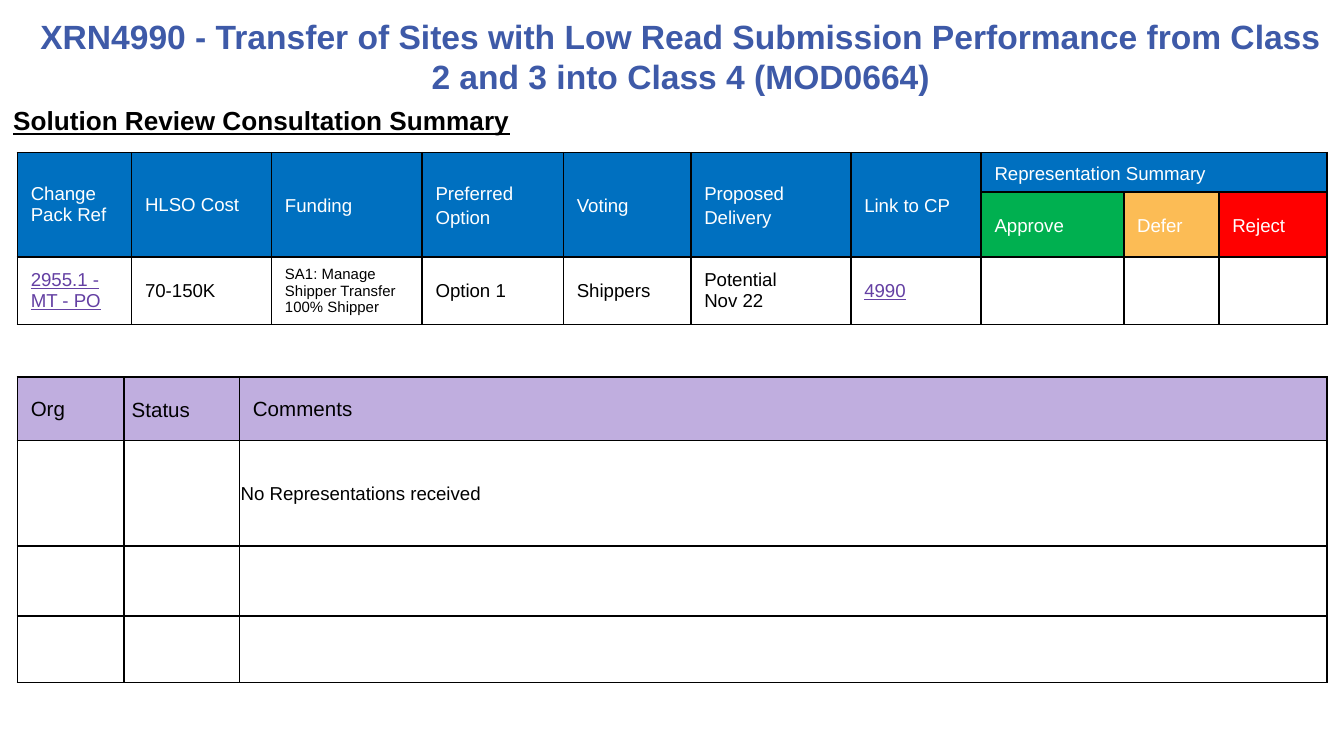
from dataclasses import dataclass

from lxml import etree
from pptx import Presentation
from pptx.dml.color import RGBColor
from pptx.enum.text import MSO_ANCHOR, PP_ALIGN
from pptx.oxml.ns import qn
from pptx.util import Pt

MIDDLE = MSO_ANCHOR.MIDDLE
CENTER = PP_ALIGN.CENTER
TITLE_ONLY = 5

FONT = "Arial"
BLACK, WHITE = "000000", "FFFFFF"
TITLE_BLUE, LINK_PURPLE = "3E5AA8", "6440A3"
HEADER_BLUE, HEADER_LILAC = "0070C0", "C0AEDF"
APPROVE_GREEN, DEFER_AMBER, REJECT_RED = "00B050", "FCBC55", "FF0000"
BORDER_WIDTH = Pt(1)
TABLE_LEFT = 9.3


@dataclass(frozen=True)
class Entry:
    """One filled-in table cell; margins are left, top, right, bottom in points."""
    row: int
    column: int
    text: str
    size: float = 10
    color: str = BLACK
    fill: str = WHITE
    underline: bool = False
    line_spacing: float = 1.0
    row_span: int = 1
    column_span: int = 1
    margins: tuple = (7.2, 3.6, 7.2, 3.6)


def rgb(color: str) -> RGBColor:
    return RGBColor.from_string(color)


def write_text(frame, text: str, *, size: float, color: str = BLACK, bold: bool = False,
               underline: bool = False, line_spacing: float = 1.0, align=None) -> None:
    """Write each line of text as its own paragraph."""
    for index, line in enumerate(text.split("\n")):
        paragraph = frame.add_paragraph() if index else frame.paragraphs[0]
        paragraph.line_spacing = line_spacing
        paragraph.alignment = align
        run = paragraph.add_run()
        run.text = line
        run.font.name = FONT
        run.font.size = Pt(size)
        run.font.bold = bold
        run.font.underline = underline
        run.font.color.rgb = rgb(color)


def add_borders(cell) -> None:
    properties = cell._tc.get_or_add_tcPr()
    for side in ("a:lnL", "a:lnR", "a:lnT", "a:lnB"):
        line = etree.SubElement(properties, qn(side), w=str(BORDER_WIDTH))
        fill = etree.SubElement(line, qn("a:solidFill"))
        etree.SubElement(fill, qn("a:srgbClr"), val=BLACK)


def set_fill(cell, color: str) -> None:
    cell.fill.solid()
    cell.fill.fore_color.rgb = rgb(color)


def add_grid(slide, top: float, widths: list[float], heights: list[float],
             entries: list[Entry]) -> None:
    """Add a bordered table and fill in its entries."""
    table = slide.shapes.add_table(
        len(heights), len(widths), Pt(TABLE_LEFT), Pt(top),
        Pt(sum(widths)), Pt(sum(heights))).table
    table.first_row = False
    table.horz_banding = False
    for column, width in zip(table.columns, widths):
        column.width = Pt(width)
    for row, height in zip(table.rows, heights):
        row.height = Pt(height)
    for cell in table.iter_cells():
        add_borders(cell)
        set_fill(cell, WHITE)

    for entry in entries:
        cell = table.cell(entry.row, entry.column)
        if entry.row_span * entry.column_span > 1:
            cell.merge(table.cell(entry.row + entry.row_span - 1,
                                  entry.column + entry.column_span - 1))
        set_fill(cell, entry.fill)
        cell.vertical_anchor = MIDDLE
        (cell.margin_left, cell.margin_top,
         cell.margin_right, cell.margin_bottom) = map(Pt, entry.margins)
        write_text(cell.text_frame, entry.text, size=entry.size, color=entry.color,
                   underline=entry.underline, line_spacing=entry.line_spacing)


def summary_entries() -> list[Entry]:
    headings = ["Change Pack Ref", "HLSO Cost", "Funding", "Preferred Option",
                "Voting", "Proposed Delivery", "Link to CP"]
    entries = [
        Entry(0, column, heading, color=WHITE, fill=HEADER_BLUE, row_span=2,
              line_spacing=1.15 if column >= 2 else 1.0)
        for column, heading in enumerate(headings)
    ]
    entries.append(Entry(0, 7, "Representation Summary", color=WHITE,
                         fill=HEADER_BLUE, column_span=3, line_spacing=1.15))
    outcomes = [("Approve", APPROVE_GREEN), ("Defer", DEFER_AMBER), ("Reject", REJECT_RED)]
    entries += [Entry(1, column, outcome, color=WHITE, fill=fill, line_spacing=1.15)
                for column, (outcome, fill) in enumerate(outcomes, start=7)]
    return entries + [
        Entry(2, 0, "2955.1 - MT - PO", color=LINK_PURPLE, underline=True),
        Entry(2, 1, "70-150K"),
        Entry(2, 2, "SA1: Manage Shipper Transfer\n100% Shipper", size=8),
        Entry(2, 3, "Option 1"),
        Entry(2, 4, "Shippers"),
        Entry(2, 5, "Potential\nNov 22"),
        Entry(2, 6, "4990", color=LINK_PURPLE, underline=True),
    ]


def comment_entries() -> list[Entry]:
    return [
        Entry(0, 0, "Org", size=11, fill=HEADER_LILAC),
        Entry(0, 1, "Status", size=11, fill=HEADER_LILAC, line_spacing=1.15,
              margins=(4.3, 0, 4.3, 0)),
        Entry(0, 2, "Comments", size=11, fill=HEADER_LILAC),
        Entry(1, 2, "No Representations received", margins=(0.7, 0.7, 0.7, 0)),
    ]


def main() -> None:
    presentation = Presentation()
    presentation.slide_width, presentation.slide_height = Pt(720), Pt(405)
    slide = presentation.slides.add_slide(presentation.slide_layouts[TITLE_ONLY])

    title = slide.shapes.title
    title.left, title.top, title.width, title.height = Pt(9.4), Pt(3.6), Pt(710.6), Pt(52.6)
    title.text_frame.vertical_anchor = MIDDLE
    write_text(title.text_frame,
               "XRN4990 - Transfer of Sites with Low Read Submission Performance "
               "from Class 2 and 3 into Class 4 (MOD0664)",
               size=18, color=TITLE_BLUE, bold=True, align=CENTER)

    subtitle = slide.shapes.add_textbox(Pt(0), Pt(52.6), Pt(343.4), Pt(24.5))
    subtitle.text_frame.word_wrap = True
    write_text(subtitle.text_frame, "Solution Review Consultation Summary",
               size=14, bold=True, underline=True)

    add_grid(slide, 81.8, [61.2, 75, 80.7, 75.7, 68.3, 85.7, 69.8, 76.4, 51, 57.8],
             [21.2, 34.8, 36], summary_entries())
    add_grid(slide, 202.1, [57, 62, 582.6], [34, 56.4, 37.5, 35.7], comment_entries())

    presentation.save("out.pptx")


if __name__ == "__main__":
    main()
